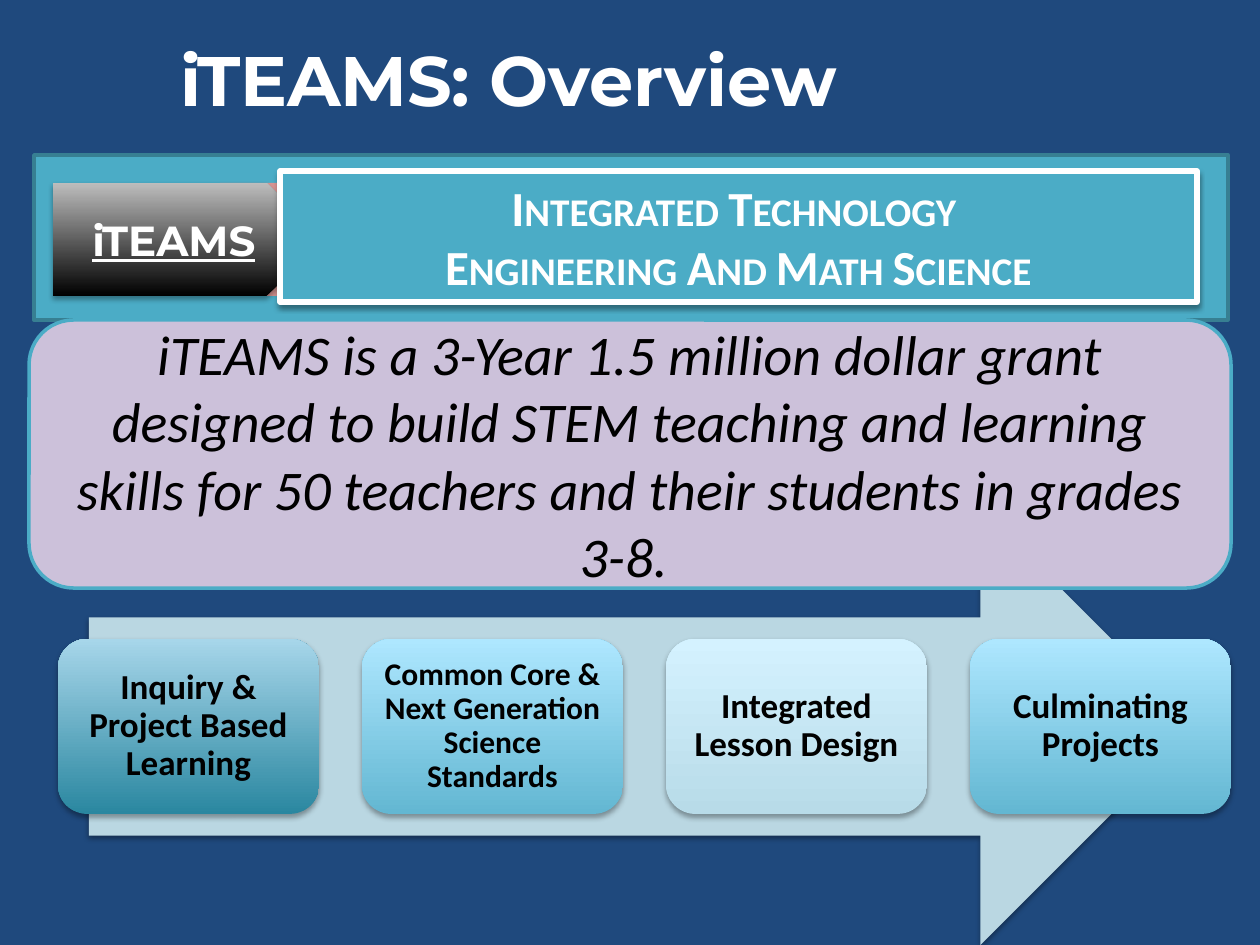
from dataclasses import dataclass
from typing import Optional

import lxml.etree
import pptx
import pptx.dml.color
import pptx.enum.shapes
import pptx.enum.text
import pptx.oxml.ns
import pptx.util

RGBColor = pptx.dml.color.RGBColor
Geometry = pptx.enum.shapes.MSO_SHAPE
Alignment = pptx.enum.text.PP_ALIGN
Anchor = pptx.enum.text.MSO_ANCHOR

NAVY = RGBColor(0x1F, 0x49, 0x7D)
TEAL = RGBColor(0x4B, 0xAC, 0xC6)
DARK_TEAL = RGBColor(0x37, 0x7F, 0x92)
ROSE = RGBColor(0xD9, 0x96, 0x94)
LILAC = RGBColor(0xCC, 0xC1, 0xDA)
ARROW_BLUE = RGBColor(0xBA, 0xD7, 0xE2)
WHITE = RGBColor(0xFF, 0xFF, 0xFF)
BLACK = RGBColor(0x00, 0x00, 0x00)
SILVER = RGBColor(0xBD, 0xBD, 0xBD)
OCEAN = RGBColor(0x2A, 0x87, 0xA0)
MIST = RGBColor(0xA7, 0xD6, 0xEA)
SKY = RGBColor(0x63, 0xB7, 0xD2)
LIGHT_SKY = RGBColor(0xAE, 0xE7, 0xFF)
ICE = RGBColor(0xB8, 0xDB, 0xE8)
LIGHT_ICE = RGBColor(0xD4, 0xF2, 0xFF)

PIXELS_PER_INCH = 126


def px(pixels: int) -> int:
    return round(pixels * pptx.util.Inches(1) / PIXELS_PER_INCH)


@dataclass(frozen=True)
class Box:
    left: int
    top: int
    width: int
    height: int

    def emu(self) -> tuple[int, int, int, int]:
        return px(self.left), px(self.top), px(self.width), px(self.height)


@dataclass(frozen=True)
class TextStyle:
    size: int
    color: RGBColor
    font: str = "Calibri"
    bold: bool = True
    italic: bool = False
    underline: bool = False
    small_caps: bool = False
    alignment: Alignment = Alignment.CENTER
    line_spacing: float = 1.0


@dataclass(frozen=True)
class Panel:
    geometry: Geometry
    box: Box
    bottom_color: RGBColor
    top_color: Optional[RGBColor] = None
    line_color: Optional[RGBColor] = None
    line_width: int = 2
    shadow_opacity: int = 0
    text: str = ""
    style: Optional[TextStyle] = None
    inset: Optional[int] = None


@dataclass(frozen=True)
class Card:
    text: str
    bottom_color: RGBColor
    top_color: RGBColor
    size: int = 20
    inset: int = 10


TITLE_BOX = Box(168, 30, 1061, 97)
TITLE_STYLE = TextStyle(40, WHITE, "Montserrat", alignment=Alignment.LEFT)

HEADER_PANELS = [
    Panel(Geometry.RECTANGLE, Box(34, 155, 1194, 165), TEAL, line_color=DARK_TEAL),
    Panel(Geometry.RECTANGLE, Box(220, 183, 977, 113), ROSE),
    Panel(Geometry.PENTAGON, Box(53, 183, 270, 113), BLACK, SILVER,
          shadow_opacity=35, text="iTEAMS",
          style=TextStyle(24, WHITE, "Montserrat", underline=True)),
    Panel(Geometry.RECTANGLE, Box(280, 171, 917, 131), TEAL,
          line_color=WHITE, line_width=3, shadow_opacity=38,
          text="Integrated Technology \nEngineering And Math Science",
          style=TextStyle(28, WHITE, small_caps=True)),
    Panel(Geometry.RIGHT_ARROW, Box(89, 508, 1110, 437), ARROW_BLUE,
          shadow_opacity=35),
]

DESCRIPTION = Panel(
    Geometry.ROUNDED_RECTANGLE, Box(29, 320, 1202, 268), LILAC, line_color=TEAL,
    text="iTEAMS is a 3-Year 1.5 million dollar grant designed to build STEM "
         "teaching and learning skills for 50 teachers and their students in "
         "grades 3-8. ",
    style=TextStyle(32, BLACK, bold=False, italic=True))

CARDS = [
    Card("Inquiry & Project Based Learning", OCEAN, MIST),
    Card("Common Core & Next Generation Science Standards", SKY, LIGHT_SKY, 18, 9),
    Card("Integrated Lesson Design", ICE, LIGHT_ICE),
    Card("Culminating Projects", SKY, LIGHT_SKY),
]
FIRST_CARD = Box(58, 639, 261, 175)
CARD_STEP = 304


def write_text(text_frame, text: str, style: TextStyle) -> None:
    text_frame.text = text
    text_frame.word_wrap = True
    for paragraph in text_frame.paragraphs:
        paragraph.alignment = style.alignment
        paragraph.line_spacing = style.line_spacing
        for run in paragraph.runs:
            run.font.name = style.font
            run.font.size = pptx.util.Pt(style.size)
            run.font.color.rgb = style.color
            run.font.bold = style.bold
            run.font.italic = style.italic
            run.font.underline = style.underline
            if style.small_caps:
                run._r.get_or_add_rPr().set("cap", "small")


def add_shadow(shape, opacity: int) -> None:
    qn = pptx.oxml.ns.qn
    effects = shape._element.spPr.find(qn("a:effectLst"))
    shadow = lxml.etree.SubElement(
        effects, qn("a:outerShdw"), blurRad=str(pptx.util.Pt(3.1)),
        dist=str(pptx.util.Pt(1.8)), dir="5400000", rotWithShape="0")
    color = lxml.etree.SubElement(shadow, qn("a:srgbClr"), val=str(BLACK))
    lxml.etree.SubElement(color, qn("a:alpha"), val=str(opacity * 1000))


def paint(shape, panel: Panel) -> None:
    if panel.top_color is None:
        shape.fill.solid()
        shape.fill.fore_color.rgb = panel.bottom_color
    else:
        shape.fill.gradient()
        shape.fill.gradient_angle = 90
        colors = (panel.bottom_color, panel.top_color)
        for position, (stop, color) in enumerate(zip(shape.fill.gradient_stops, colors)):
            stop.position = position
            stop.color.rgb = color
    if panel.line_color is None:
        shape.line.fill.background()
    else:
        shape.line.color.rgb = panel.line_color
        shape.line.width = pptx.util.Pt(panel.line_width)


def add_panel(slide, panel: Panel) -> None:
    shape = slide.shapes.add_shape(panel.geometry, *panel.box.emu())
    paint(shape, panel)
    shape.shadow.inherit = False
    if panel.shadow_opacity:
        add_shadow(shape, panel.shadow_opacity)
    if panel.style:
        text_frame = shape.text_frame
        write_text(text_frame, panel.text, panel.style)
        text_frame.vertical_anchor = Anchor.MIDDLE
        if panel.inset is not None:
            for side in ("left", "top", "right", "bottom"):
                setattr(text_frame, f"margin_{side}", px(panel.inset))


def add_card(slide, index: int, card: Card) -> None:
    box = Box(FIRST_CARD.left + index * CARD_STEP, FIRST_CARD.top,
              FIRST_CARD.width, FIRST_CARD.height)
    add_panel(slide, Panel(
        Geometry.ROUNDED_RECTANGLE, box, card.bottom_color, card.top_color,
        shadow_opacity=35, text=card.text, inset=card.inset,
        style=TextStyle(card.size, BLACK, line_spacing=0.9)))


def add_title(slide, text: str) -> None:
    title = slide.shapes.title
    title.left, title.top, title.width, title.height = TITLE_BOX.emu()
    write_text(title.text_frame, text, TITLE_STYLE)
    title.text_frame.vertical_anchor = Anchor.TOP


def main() -> None:
    presentation = pptx.Presentation()
    presentation.slide_width = px(1260)
    presentation.slide_height = px(945)
    slide = presentation.slides.add_slide(presentation.slide_layouts[5])
    slide.background.fill.solid()
    slide.background.fill.fore_color.rgb = NAVY
    add_title(slide, "iTEAMS: Overview")
    for panel in HEADER_PANELS:
        add_panel(slide, panel)
    for index, card in enumerate(CARDS):
        add_card(slide, index, card)
    add_panel(slide, DESCRIPTION)
    presentation.save("out.pptx")


if __name__ == "__main__":
    main()
